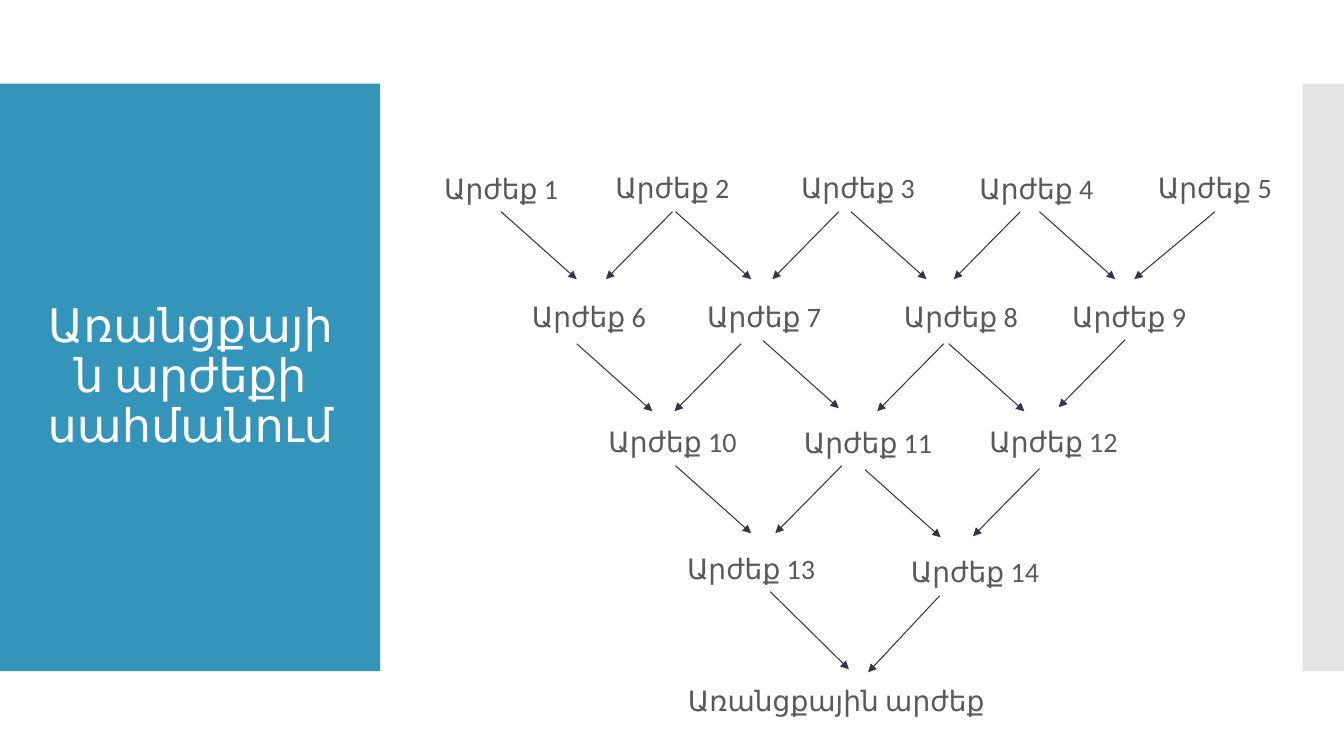
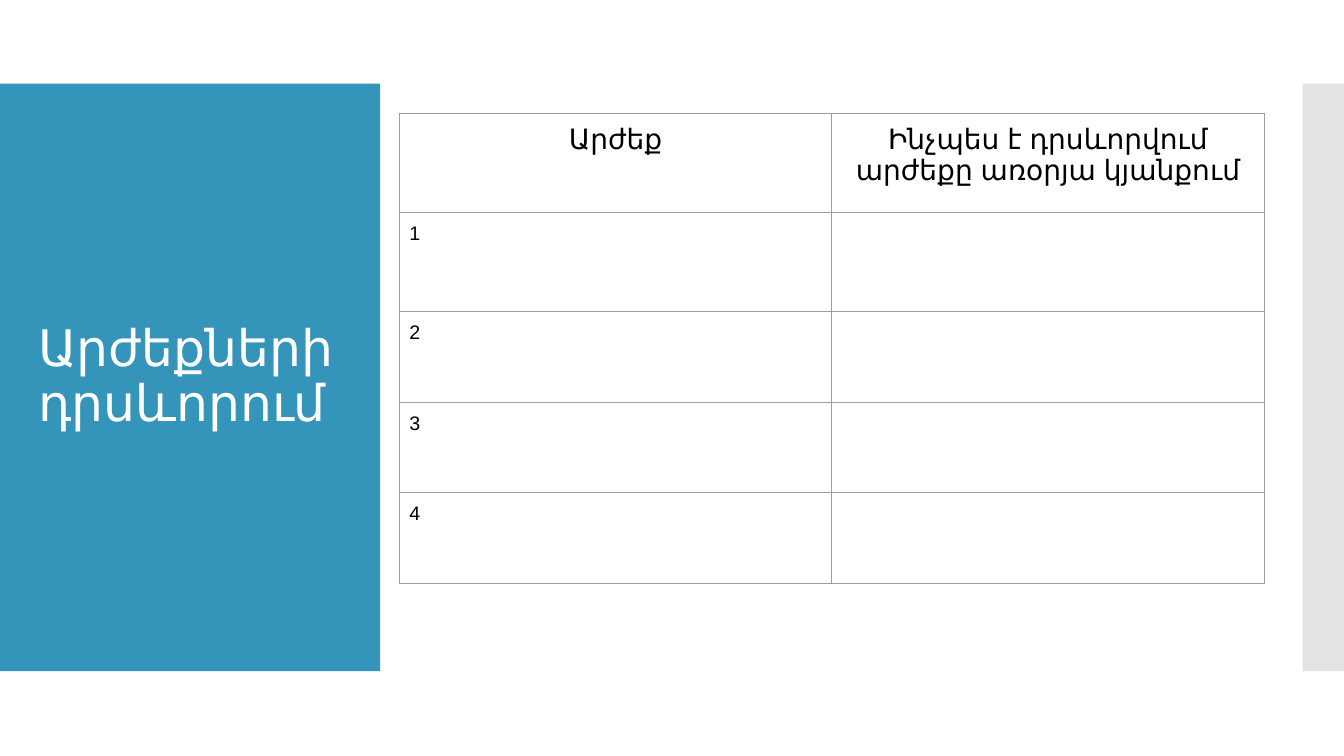
from lxml import etree
from pptx import Presentation
from pptx import util as u
from pptx.dml.color import RGBColor
from pptx.enum import shapes, text
from pptx.oxml.ns import qn

PX = 9144  # 100 px to the inch
WIDTH, HEIGHT = 1333, 750
BLUE, GREY, WHITE, BLACK = "3494BA", "C8C8C8", "FFFFFF", "000000"
LABEL_COLOR, ARROW_COLOR, BORDER_COLOR = "595959", "373545", "9E9E9E"
TITLE_FONT, TABLE_FONT = "Calibri", "Arial"
LEFT, CENTER = text.PP_ALIGN.LEFT, text.PP_ALIGN.CENTER

BAND_TOP, BAND_HEIGHT = 83, 583
BANDS = [(0, 377, BLUE, 100), (1292, WIDTH - 1292, GREY, 50)]  # left, width, colour, opacity
TITLE_BOX = (28, 123, 322, 503)

PYRAMID_TITLE = "Առանցքային արժեքի սահմանում"
VALUE_WORD = "Արժեք"
VALUE_SIZE = (194, 51)
VALUE_SPOTS = [
    (400, 160), (570, 159), (754, 159), (931, 160), (1108, 159),
    (487, 287), (661, 287), (856, 287), (1023, 287),
    (570, 411), (764, 412), (948, 411),
    (648, 537), (870, 540),
]
CORE_VALUE = ("Առանցքային արժեք", (648, 668, 363, 51))

# (dx, dy) of an arrow: the points it starts from
ARROWS = {
    (75, 67): [(497, 210), (670, 210), (844, 210), (1031, 210),
               (572, 341), (757, 338), (941, 341), (670, 462), (858, 466)],
    (-66, 67): [(667, 210), (832, 210), (1012, 210),
                (735, 341), (936, 341), (1116, 337), (835, 462), (1031, 465)],
    (-80, 67): [(1205, 210)],
    (78, 77): [(764, 587)],
    (-71, 76): [(932, 591)],
}

TABLE_TITLE = "Արժեքների դրսևորում"
TABLE_ROWS = [
    ("Արժեք", "Ինչպես է դրսևորվում արժեքը առօրյա կյանքում"),
    ("1", ""), ("2", ""), ("3", ""), ("4", ""),
]
TABLE_SPOT = (396, 113)
COL_WIDTH = 429
ROW_HEIGHTS = [98, 98, 90, 90, 90]


def px(*lengths):
    return [u.Emu(n * PX) for n in lengths]


def rgb(color):
    return RGBColor.from_string(color)


def write(tf, words, font, size, color, align):
    p = tf.paragraphs[0]
    p.alignment = align
    r = p.add_run()
    r.text = words
    r.font.name, r.font.size, r.font.bold = font, u.Pt(size), False
    r.font.color.rgb = rgb(color)
    return p


def set_margins(box, gap=10):
    box.margin_left, box.margin_top, box.margin_right, box.margin_bottom = px(*[gap] * 4)


def prepare_layout(prs):
    """Put the bands and the title position on the layout that both slides use."""
    layout = prs.slide_layouts.get_by_name("Title Only")
    for ph in layout.placeholders:
        if ph.placeholder_format.type == shapes.PP_PLACEHOLDER.TITLE:
            ph.left, ph.top, ph.width, ph.height = px(*TITLE_BOX)
    return layout


def move_bands_to_layout(s, layout):
    """Layouts cannot add shapes, so draw the bands on a slide and hand them over."""
    for i, (left, width, color, opacity) in enumerate(BANDS):
        sp = s.shapes.add_shape(shapes.MSO_SHAPE.RECTANGLE,
                                *px(left, BAND_TOP, width, BAND_HEIGHT))
        sp.shadow.inherit = False
        sp.line.fill.background()
        sp.fill.solid()
        sp.fill.fore_color.rgb = rgb(color)
        if opacity < 100:
            clr = sp.element.spPr.find(".//" + qn("a:srgbClr"))
            etree.SubElement(clr, qn("a:alpha")).set("val", str(opacity * 1000))
        layout.shapes.element.insert(2 + i, sp.element)


def add_slide(prs, layout, title, size, align):
    s = prs.slides.add_slide(layout)
    tf = s.shapes.title.text_frame
    tf.word_wrap = True
    tf.auto_size = text.MSO_AUTO_SIZE.NONE
    tf.vertical_anchor = text.MSO_ANCHOR.MIDDLE
    write(tf, title, TITLE_FONT, size, WHITE, align).line_spacing = 0.9
    return s


def add_label(s, words, box):
    tf = s.shapes.add_textbox(*px(*box)).text_frame
    tf.word_wrap = True
    set_margins(tf)
    write(tf, words, TITLE_FONT, 20, LABEL_COLOR, CENTER)


def add_arrow(s, x, y, dx, dy):
    c = s.shapes.add_connector(shapes.MSO_CONNECTOR.STRAIGHT, *px(x, y, x + dx, y + dy))
    c.line.color.rgb = rgb(ARROW_COLOR)
    c.line.width = u.Pt(0.75)
    spPr = c.element.spPr
    etree.SubElement(spPr.find(qn("a:ln")), qn("a:tailEnd")).set("type", "triangle")
    etree.SubElement(spPr, qn("a:effectLst"))


def add_borders(cell):
    tcPr = cell._tc.get_or_add_tcPr()
    for side in "LRTB":
        ln = etree.SubElement(tcPr, qn("a:ln" + side), w=str(u.Pt(0.75)))
        fill = etree.SubElement(ln, qn("a:solidFill"))
        etree.SubElement(fill, qn("a:srgbClr"), val=BORDER_COLOR)


def add_value_table(s):
    rows, cols = len(TABLE_ROWS), len(TABLE_ROWS[0])
    tbl = s.shapes.add_table(
        rows, cols, *px(*TABLE_SPOT, cols * COL_WIDTH, sum(ROW_HEIGHTS))).table
    tbl.first_row = tbl.horz_banding = False
    for col in tbl.columns:
        col.width = px(COL_WIDTH)[0]
    for i, (row, height) in enumerate(zip(tbl.rows, ROW_HEIGHTS)):
        row.height = px(height)[0]
        size, align = (14, LEFT) if i else (20, CENTER)
        for cell, words in zip(row.cells, TABLE_ROWS[i]):
            add_borders(cell)
            cell.fill.background()
            set_margins(cell)
            if words:
                write(cell.text_frame, words, TABLE_FONT, size, BLACK, align)


def main():
    prs = Presentation()
    prs.slide_width, prs.slide_height = px(WIDTH, HEIGHT)
    layout = prepare_layout(prs)

    s = add_slide(prs, layout, PYRAMID_TITLE, 33, CENTER)
    move_bands_to_layout(s, layout)
    for number, spot in enumerate(VALUE_SPOTS, 1):
        add_label(s, f"{VALUE_WORD} {number}", spot + VALUE_SIZE)
    add_label(s, *CORE_VALUE)
    for step, starts in ARROWS.items():
        for start in starts:
            add_arrow(s, *start, *step)

    s = add_slide(prs, layout, TABLE_TITLE, 36, LEFT)
    add_value_table(s)

    prs.save("out.pptx")


if __name__ == "__main__":
    main()
